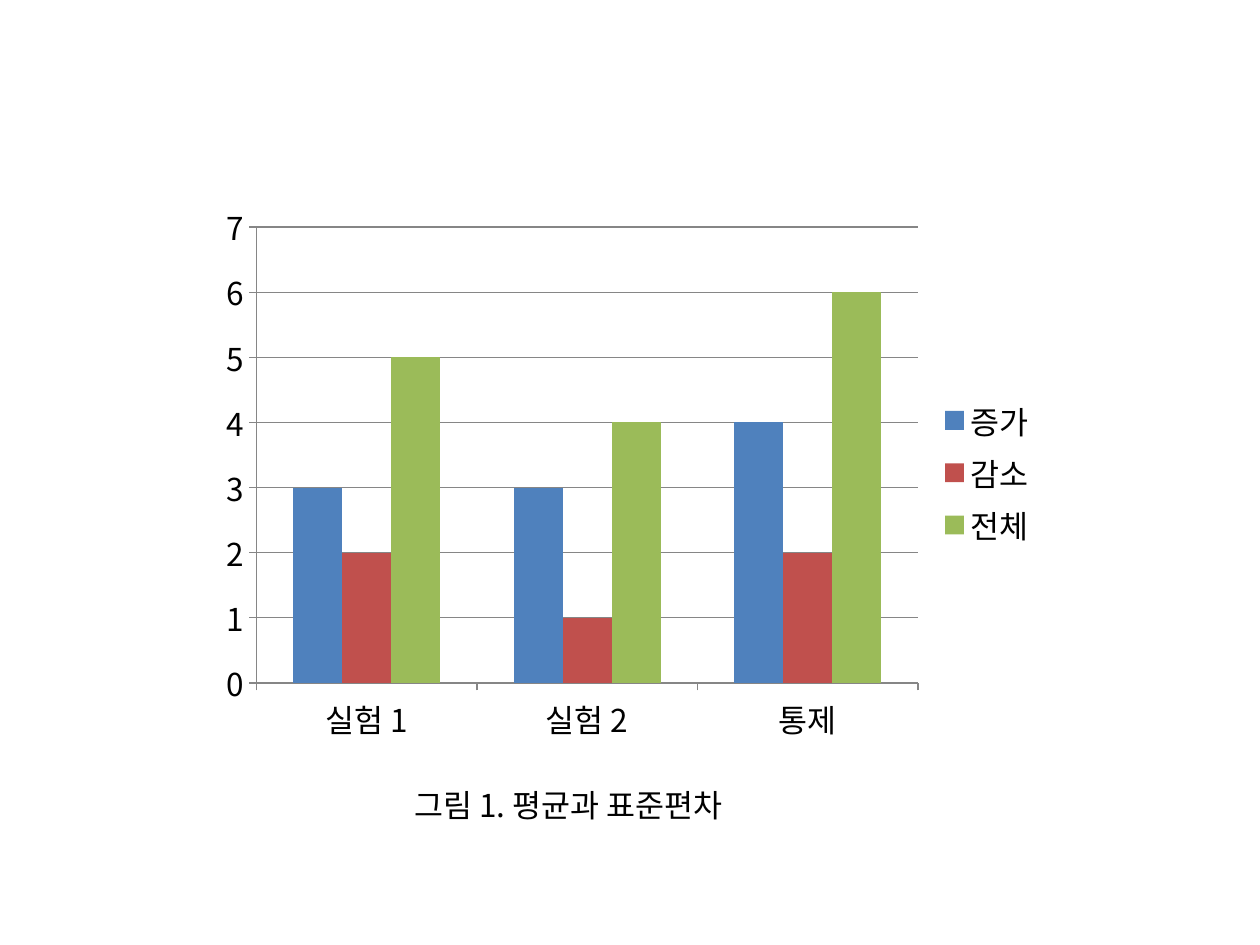
import pptx
import pptx.chart.data
import pptx.dml.color
import pptx.enum.chart
import pptx.enum.text
import pptx.oxml
import pptx.oxml.ns
import pptx.util
from pptx.util import Cm

FONT = "Noto Sans CJK KR"
TEXT_SIZE = 18
BLACK = pptx.dml.color.RGBColor(0x00, 0x00, 0x00)
GREY = pptx.dml.color.RGBColor(0x86, 0x86, 0x86)
BLUE = pptx.dml.color.RGBColor(0x4F, 0x81, 0xBD)
RED = pptx.dml.color.RGBColor(0xC0, 0x50, 0x4D)
GREEN = pptx.dml.color.RGBColor(0x9B, 0xBB, 0x59)

CONDITIONS = ["실험 1", "실험 2", "통제"]
MEASURES = [
    ("증가", (3, 3, 4), BLUE),
    ("감소", (2, 1, 2), RED),
    ("전체", (5, 4, 6), GREEN),
]


def format_font(font, size=TEXT_SIZE, color=BLACK, name=FONT):
    font.size = pptx.util.Pt(size)
    font.color.rgb = color
    font.name = name


def add_text(slide, text, left, top, width, height, **font_format):
    box = slide.shapes.add_textbox(left, top, width, height)
    frame = box.text_frame
    frame.word_wrap = True
    frame.auto_size = pptx.enum.text.MSO_AUTO_SIZE.SHAPE_TO_FIT_TEXT
    run = frame.paragraphs[0].add_run()
    run.text = text
    format_font(run.font, **font_format)
    east_asian = pptx.oxml.parse_xml(
        f'<a:ea {pptx.oxml.ns.nsdecls("a")} typeface="{FONT}"/>')
    run.font._element.append(east_asian)


def add_measure_chart(slide, left, top, width, height):
    data = pptx.chart.data.CategoryChartData()
    data.categories = CONDITIONS
    for name, values, _ in MEASURES:
        data.add_series(name, values)
    chart = slide.shapes.add_chart(
        pptx.enum.chart.XL_CHART_TYPE.COLUMN_CLUSTERED,
        left, top, width, height, data).chart
    format_font(chart.font)
    chart.has_title = False
    chart.has_legend = True
    chart.legend.position = pptx.enum.chart.XL_LEGEND_POSITION.RIGHT
    chart.legend.include_in_layout = False

    columns = chart.plots[0]
    columns.gap_width = 150
    columns.overlap = 0
    columns.vary_by_categories = False
    for series, (_, _, color) in zip(columns.series, MEASURES):
        series.format.fill.solid()
        series.format.fill.fore_color.rgb = color

    chart.value_axis.has_major_gridlines = True
    for axis in (chart.category_axis, chart.value_axis):
        axis.major_tick_mark = pptx.enum.chart.XL_TICK_MARK.OUTSIDE
    for part in (chart.category_axis, chart.value_axis,
                 chart.value_axis.major_gridlines):
        part.format.line.color.rgb = GREY
        part.format.line.width = pptx.util.Pt(0.75)


def add_figure(slide, left, top, width, height):
    """Place the chart in the box and its caption just below."""
    add_measure_chart(slide, left, top, width, height)
    add_text(slide, "그림 1. 평균과 표준편차", left + Cm(3.87),
             top + height + Cm(0.55), Cm(18.59), Cm(1.02))


def main():
    deck = pptx.Presentation()
    deck.slide_width, deck.slide_height = Cm(25.4), Cm(19.05)
    slide = deck.slides.add_slide(deck.slide_layouts[6])
    add_figure(slide, Cm(4.23), Cm(3.89), Cm(16.93), Cm(11.28))
    deck.save("out.pptx")


if __name__ == "__main__":
    main()
